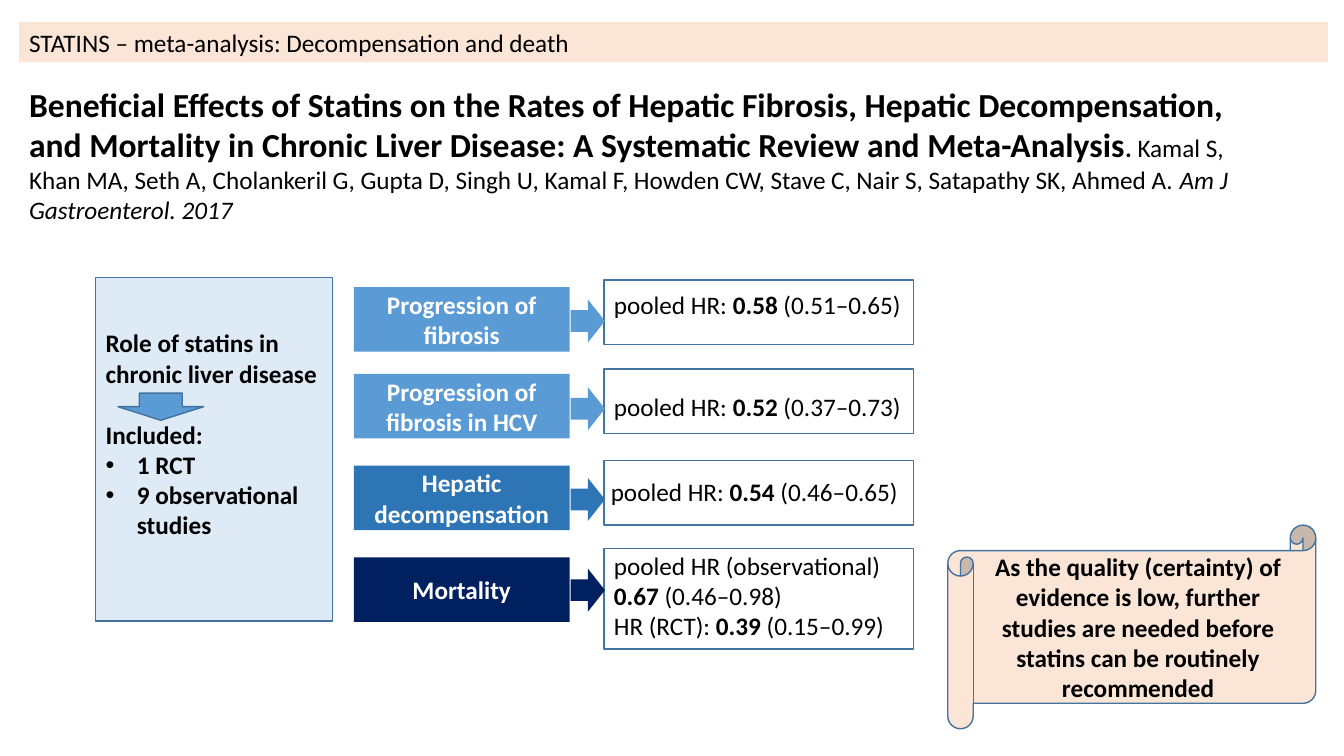
from lxml import etree
from pptx import Presentation
from pptx import util as u
from pptx.dml.color import RGBColor
from pptx.enum import shapes, text
from pptx.oxml.ns import qn

PX = 9144  # EMU per px, 100 px to the inch
COLORS = {
    "black": "000000", "white": "FFFFFF", "peach": "FBE5D6", "pale": "DEEBF7",
    "blue": "5B9BD5", "mid": "2E75B6", "navy": "002060", "outline": "43739E",
}
SHAPE = shapes.MSO_SHAPE
LEFT, CENTER = text.PP_ALIGN.LEFT, text.PP_ALIGN.CENTER
TOP, MIDDLE = text.MSO_ANCHOR.TOP, text.MSO_ANCHOR.MIDDLE


def rgb(name):
    return RGBColor.from_string(COLORS[name])


class Deck:
    """Holds the style and the current slide."""
    font, size = "Calibri", 18

    def __init__(self, width, height):
        self.prs = Presentation()
        self.prs.slide_width, self.prs.slide_height = width * PX, height * PX
        self.s = self.prs.slides.add_slide(self.prs.slide_layouts[6])

    def shape(self, kind, box, fill=None, line=None):
        sp = self.s.shapes.add_shape(kind, *(v * PX for v in box))
        sp.shadow.inherit = False
        if fill:
            sp.fill.solid()
            sp.fill.fore_color.rgb = rgb(fill)
        else:
            sp.fill.background()
        if line:
            sp.line.color.rgb = rgb(line)
            sp.line.width = u.Pt(1)
        else:
            sp.line.fill.background()
        return sp

    def textbox(self, box, paragraphs):
        sp = self.s.shapes.add_textbox(*(v * PX for v in box))
        return self.label(sp, paragraphs)

    def label(self, sp, paragraphs, color="black", style="", align=LEFT, anchor=TOP):
        """Each paragraph is a list of runs: (text, style letters, size) or plain text."""
        tf = sp.text_frame
        tf.word_wrap = True
        tf.vertical_anchor = anchor
        for i, runs in enumerate(paragraphs):
            p = tf.paragraphs[0] if i == 0 else tf.add_paragraph()
            p.alignment = align
            for run in [runs] if isinstance(runs, str) else runs:
                words, look, size = run if isinstance(run, tuple) else (run, style, self.size)
                r = p.add_run()
                r.text = words
                r.font.name, r.font.size = self.font, u.Pt(size)
                r.font.bold, r.font.italic = "b" in look, "i" in look
                r.font.color.rgb = rgb(color)
        return tf

    def bullet(self, p, indent):
        pPr = p._p.get_or_add_pPr()
        pPr.set("marL", str(indent * PX))
        pPr.set("indent", str(-indent * PX))
        etree.SubElement(pPr, qn("a:buFont")).set("typeface", "Arial")
        etree.SubElement(pPr, qn("a:buChar")).set("char", "•")


def bold(words):
    return words, "b", Deck.size


def main():
    d = Deck(1333, 750)

    # Heading band and citation
    band = d.shape(SHAPE.RECTANGLE, (19, 22, 1298, 40), "peach")
    d.label(band, ["STATINS – meta-analysis: Decompensation and death"])
    d.textbox((19, 78, 1253, 182), [[
        ("Beneficial Effects of Statins on the Rates of Hepatic Fibrosis, Hepatic "
         "Decompensation, and Mortality in Chronic Liver Disease: A Systematic Review "
         "and Meta-Analysis", "b", 24),
        bold(". "),
        "Kamal S, Khan MA, Seth A, Cholankeril G, Gupta D, Singh U, Kamal F, "
        "Howden CW, Stave C, Nair S, Satapathy SK, Ahmed A. ",
        ("Am J Gastroenterol. 2017", "i", 18),
    ]])

    # Study panel, with room for the arrow above "Included:"
    panel = d.shape(SHAPE.RECTANGLE, (95, 275, 235, 341), "pale", "outline")
    tf = d.label(panel, ["Role of statins in chronic liver disease", "Included:",
                         "1 RCT", "9 observational studies"], style="b", anchor=MIDDLE)
    tf.margin_bottom = 35 * PX
    tf.paragraphs[1].space_before = u.Pt(22)
    for p in tf.paragraphs[2:]:
        d.bullet(p, 31)
    d.shape(SHAPE.DOWN_ARROW, (117, 390, 85, 27), "blue", "outline")

    # Outcome rows: label, colour, label top, arrow top, result box, result text, result
    rows = [
        ("Progression of fibrosis", "blue", 285, 297, (278, 64), (599, 282),
         [["pooled HR: ", bold("0.58"), " (0.51–0.65)"]]),
        ("Progression of fibrosis in HCV", "blue", 371, 384, (366, 64), (599, 383),
         [["pooled HR: ", bold("0.52"), " (0.37–0.73)"]]),
        ("Hepatic decompensation", "mid", 462, 474, (457, 64), (596, 468),
         [["pooled HR: ", bold("0.54"), " (0.46–0.65)"]]),
        ("Mortality", "navy", 553, 564, (544, 100), (599, 541),
         [["pooled HR (observational)"], [bold("0.67 "), "(0.46–0.98)"],
          ["HR (RCT): ", bold("0.39"), " (0.15–0.99)"]]),
    ]
    for outcome, color, top, arrow_top, (box_top, box_height), (x, y), result in rows:
        sp = d.shape(SHAPE.RECTANGLE, (351, top, 214, 64), color)
        d.label(sp, [outcome], "white", "b", CENTER, MIDDLE)
        d.shape(SHAPE.RECTANGLE, (599, box_top, 307, box_height), line="outline")
        d.shape(SHAPE.RIGHT_ARROW, (566, arrow_top, 34, 43), color)
        d.textbox((x, y, 344, 10 + 30 * len(result)), result)

    # Conclusion
    scroll = d.shape(SHAPE.HORIZONTAL_SCROLL, (940, 521, 365, 202), "peach", "outline")
    d.label(scroll, ["As the quality (certainty) of",
                     "evidence is low, further studies are needed before statins "
                     "can be routinely recommended"], "black", "b", CENTER, MIDDLE)

    d.prs.save("out.pptx")


if __name__ == "__main__":
    main()
